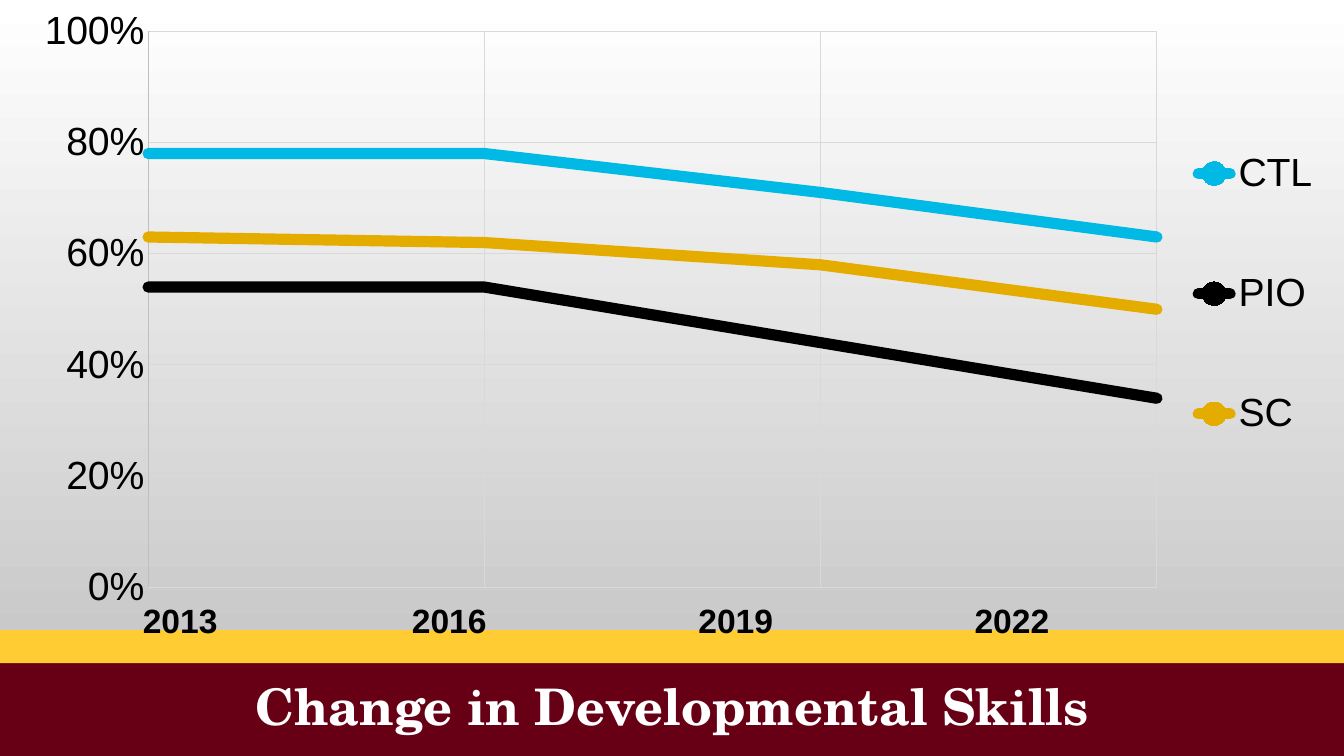
"""Build a slide with a line chart of developmental skills over a banded title."""
from dataclasses import dataclass

from lxml.etree import SubElement
from pptx import Presentation
from pptx.chart.data import XyChartData
from pptx.dml.color import RGBColor
from pptx.enum.chart import XL_CHART_TYPE as ChartType, XL_LEGEND_POSITION as LegendSide
from pptx.enum.chart import XL_MARKER_STYLE as Marker, XL_TICK_MARK as Tick
from pptx.enum.shapes import MSO_SHAPE as Shape
from pptx.enum.text import MSO_ANCHOR as Anchor, PP_ALIGN as Align
from pptx.oxml.ns import qn
from pptx.util import Cm, Pt

TITLE = "Change in Developmental Skills"
YEARS = ["2013", "2016", "2019", "2022"]
YEAR_STOPS = [6.78, 14.0, 20.96]
SERIES = [
    ("CTL", "00B9E4", [0.78, 0.78, 0.71, 0.63]),
    ("PIO", "000000", [0.54, 0.54, 0.44, 0.34]),
    ("SC", "E5AC00", [0.63, 0.62, 0.58, 0.50]),
]
WIDTH, HEIGHT = 33.87, 19.05
MAROON_TOP, GOLD_TOP = 16.71, 15.88
CHART_FRAME = (0.43, 0, 33.02, 15.75)
PLOT_AREA = (0.1, 0.05, 0.77, 0.89)
LEGEND_AREA = (0.89, 0.12, 0.11, 0.7)
YEARS_FRAME = (3.35, 14.99, 24.5, 1.27)


@dataclass(frozen=True)
class Theme:
    maroon: str = "670015"
    gold: str = "FFCC33"
    white: str = "FFFFFF"
    shade: str = "BFBFBF"
    grid: str = "D9D9D9"
    ink: str = "000000"
    title_face: str = "TeX Gyre Schola"
    face: str = "Arial"
    title_size: int = 36
    chart_size: int = 28
    year_size: int = 24
    series_width: int = 8
    hairline: float = 0.75


THEME = Theme()


def rgb(code):
    return RGBColor.from_string(code)


def set_font(font, face, size, color, bold=False):
    font.name, font.size, font.bold = face, Pt(size), bold
    font.color.rgb = rgb(color)


def set_line(line, color, width):
    line.color.rgb = rgb(color)
    line.width = Pt(width)


def paint_background(page):
    fill = page.background.fill
    fill.gradient()
    fill.gradient_angle = 270
    for stop, color, place in zip(fill.gradient_stops, (THEME.white, THEME.shade), (0, 1)):
        stop.color.rgb = rgb(color)
        stop.position = place


def add_band(page, top, bottom, color):
    band = page.shapes.add_shape(Shape.RECTANGLE, 0, Cm(top), Cm(WIDTH), Cm(bottom - top))
    band.shadow.inherit = False
    band.fill.solid()
    band.fill.fore_color.rgb = rgb(color)
    band.line.fill.background()


def add_text(page, frame, text):
    box = page.shapes.add_textbox(*map(Cm, frame))
    box.text_frame.word_wrap = True
    para = box.text_frame.paragraphs[0]
    para.text = text
    return box, para


def add_title(page):
    box, para = add_text(page, (0, MAROON_TOP, WIDTH, HEIGHT - MAROON_TOP), TITLE)
    box.text_frame.vertical_anchor = Anchor.MIDDLE
    para.alignment = Align.CENTER
    para.line_spacing = 0.9
    set_font(para.font, THEME.title_face, THEME.title_size, THEME.white, True)


def add_years(page):
    box, para = add_text(page, YEARS_FRAME, "\t".join(YEARS))
    tabs = SubElement(para._p.get_or_add_pPr(), qn("a:tabLst"))
    for stop in YEAR_STOPS:
        SubElement(tabs, qn("a:tab"), pos=str(Cm(stop)), algn="l")
    set_font(para.font, THEME.face, THEME.year_size, THEME.ink, True)


def place_part(part, area, inner=False):
    for old in part.findall(qn("c:layout")):
        part.remove(old)
    layout = SubElement(part, qn("c:layout"))
    manual = SubElement(layout, qn("c:manualLayout"))
    if inner:
        SubElement(manual, qn("c:layoutTarget"), val="inner")
    for mode in ("xMode", "yMode"):
        SubElement(manual, qn(f"c:{mode}"), val="edge")
    for side, share in zip("xywh", area):
        SubElement(manual, qn(f"c:{side}"), val=str(share))
    part.insert(0 if inner else 1, layout)


def style_axes(chart):
    across, up = chart.category_axis, chart.value_axis
    for axis, low, high, step in ((across, 1, 4, 1), (up, 0, 1, 0.2)):
        axis.minimum_scale, axis.maximum_scale, axis.major_unit = low, high, step
        axis.has_major_gridlines = True
        set_line(axis.major_gridlines.format.line, THEME.grid, THEME.hairline)
    across.visible = False
    up.major_tick_mark = up.minor_tick_mark = Tick.NONE
    up.tick_labels.number_format = "0%"
    up.tick_labels.number_format_is_linked = False
    set_font(up.tick_labels.font, THEME.face, THEME.chart_size, THEME.ink)
    set_line(up.format.line, THEME.shade, THEME.hairline)


def add_skills_chart(page):
    data = XyChartData()
    for name, color, shares in SERIES:
        points = data.add_series(name)
        for step, share in enumerate(shares, 1):
            points.add_data_point(step, share)
    chart = page.shapes.add_chart(
        ChartType.XY_SCATTER_LINES, *map(Cm, CHART_FRAME), data).chart
    chart.has_title = False
    set_font(chart.font, THEME.face, THEME.chart_size, THEME.ink)
    chart.plots[0].vary_by_categories = False
    for series, (name, color, shares) in zip(chart.plots[0].series, SERIES):
        series.smooth = False
        set_line(series.format.line, color, THEME.series_width)
        series.format.line._ln.set("cap", "rnd")
        series.marker.style, series.marker.size = Marker.CIRCLE, 5
        series.marker.format.fill.solid()
        series.marker.format.fill.fore_color.rgb = rgb(color)
        series.marker.format.line.color.rgb = rgb(color)
    style_axes(chart)
    chart.has_legend = True
    chart.legend.position = LegendSide.RIGHT
    chart.legend.include_in_layout = False
    set_font(chart.legend.font, THEME.face, THEME.chart_size, THEME.ink)
    place_part(chart._chartSpace.chart.plotArea, PLOT_AREA, inner=True)
    place_part(chart.legend._element, LEGEND_AREA)


def main():
    deck = Presentation()
    deck.slide_width, deck.slide_height = Cm(WIDTH), Cm(HEIGHT)
    page = deck.slides.add_slide(deck.slide_layouts[6])
    paint_background(page)
    add_band(page, MAROON_TOP, HEIGHT, THEME.maroon)
    add_band(page, GOLD_TOP, MAROON_TOP, THEME.gold)
    add_title(page)
    add_skills_chart(page)
    add_years(page)
    deck.save("out.pptx")


if __name__ == "__main__":
    main()
